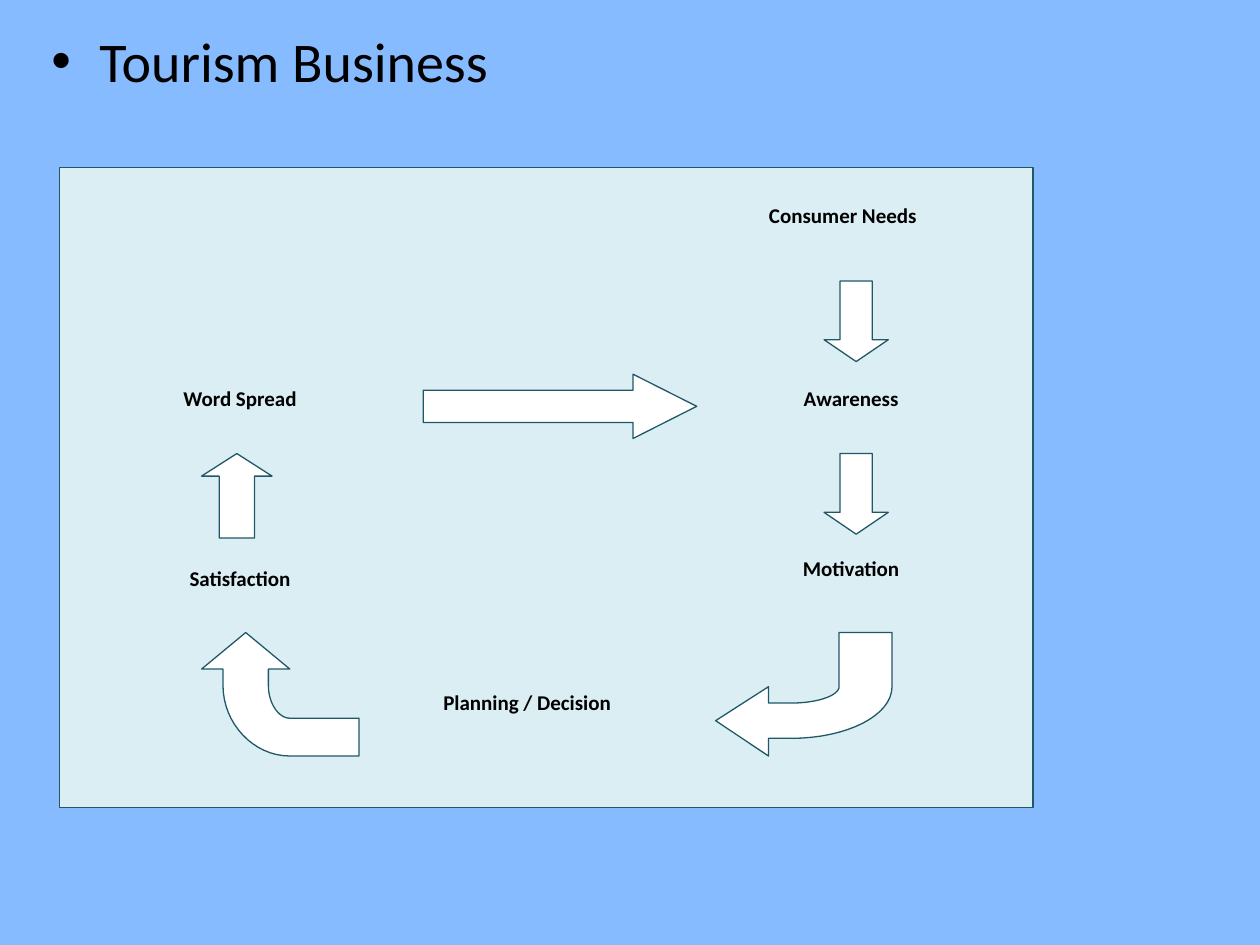
import pptx
import pptx.util
import pptx.dml.color
import pptx.enum.shapes
import pptx.enum.text
import pptx.oxml.ns
import lxml.etree

Inches = pptx.util.Inches
Pt = pptx.util.Pt
RGBColor = pptx.dml.color.RGBColor
MSO_SHAPE = pptx.enum.shapes.MSO_SHAPE
PP_ALIGN = pptx.enum.text.PP_ALIGN

SKY = RGBColor(0x87, 0xBB, 0xFF)
PALE_TEAL = RGBColor(0xDA, 0xEE, 0xF3)
DARK_TEAL = RGBColor(0x20, 0x58, 0x67)
WHITE = RGBColor(0xFF, 0xFF, 0xFF)
BLACK = RGBColor(0, 0, 0)


def style(shape, fill, outlined=True):
    shape.shadow.inherit = False
    shape.fill.solid()
    shape.fill.fore_color.rgb = fill
    if outlined:
        shape.line.color.rgb = DARK_TEAL
        shape.line.width = Pt(0.75)
    else:
        shape.line.fill.background()


def curve(start, control_1, control_2, end, steps=16):
    """Return points along a cubic Bezier curve, leaving out its start."""
    points = []
    for step in range(1, steps + 1):
        t = step / steps
        weights = ((1 - t) ** 3, 3 * t * (1 - t) ** 2, 3 * t ** 2 * (1 - t), t ** 3)
        anchors = (start, control_1, control_2, end)
        points.append(tuple(sum(w * a[axis] for w, a in zip(weights, anchors))
                            for axis in (0, 1)))
    return points


deck = pptx.Presentation()
deck.slide_width = Inches(10)
deck.slide_height = Inches(7.5)
slide = deck.slides.add_slide(deck.slide_layouts[6])
slide.background.fill.solid()
slide.background.fill.fore_color.rgb = SKY

# Heading with a bullet
heading = slide.shapes.add_textbox(Inches(0.31), Inches(0.16), Inches(9.5), Inches(1.03))
heading.text_frame.word_wrap = True
topic = heading.text_frame.paragraphs[0]
topic.text = "Tourism Business"
topic.font.size = Pt(32)
topic.font.name = "Calibri"
topic.font.color.rgb = BLACK
topic_properties = topic._p.get_or_add_pPr()
topic_properties.set("marL", str(Inches(0.38)))
topic_properties.set("indent", str(-Inches(0.38)))
bullet_font = lxml.etree.Element(pptx.oxml.ns.qn("a:buFont"), typeface="Arial")
bullet = lxml.etree.Element(pptx.oxml.ns.qn("a:buChar"), char="•")
topic_properties.insert(0, bullet_font)
topic_properties.insert(1, bullet)

# Diagram panel
diagram = slide.shapes.add_group_shape().shapes
panel = diagram.add_shape(MSO_SHAPE.RECTANGLE, Inches(0.47), Inches(1.33),
                          Inches(7.73), Inches(5.08))
style(panel, PALE_TEAL)

# Stages of the cycle
stages = [
    ("Consumer Needs", 5.82, 1.56, 1.74, PP_ALIGN.CENTER),
    ("Awareness", 5.95, 3.01, 1.61, PP_ALIGN.CENTER),
    ("Motivation", 5.95, 4.36, 1.61, PP_ALIGN.CENTER),
    ("Planning / Decision", 3.42, 5.42, 2.04, PP_ALIGN.LEFT),
    ("Satisfaction", 1.1, 4.44, 1.61, PP_ALIGN.CENTER),
    ("Word Spread", 1.1, 3.01, 1.61, PP_ALIGN.CENTER),
]
for name, left, top, width, alignment in stages:
    stage = diagram.add_shape(MSO_SHAPE.RECTANGLE, Inches(left), Inches(top),
                              Inches(width), Inches(0.47))
    style(stage, PALE_TEAL, outlined=False)
    stage.text_frame.word_wrap = True
    stage.text_frame.vertical_anchor = pptx.enum.text.MSO_ANCHOR.TOP
    label = stage.text_frame.paragraphs[0]
    label.text = name
    label.alignment = alignment
    label.space_after = Pt(10)
    label.font.size = Pt(12)
    label.font.name = "Calibri"
    label.font.bold = True
    label.font.color.rgb = BLACK

# Straight arrows between stages
straight_arrows = [
    (MSO_SHAPE.RIGHT_ARROW, 3.36, 2.97, 2.17, 0.51, 0.99),
    (MSO_SHAPE.DOWN_ARROW, 6.54, 2.23, 0.51, 0.64, 0.34),
    (MSO_SHAPE.DOWN_ARROW, 6.54, 3.6, 0.51, 0.64, 0.34),
    (MSO_SHAPE.UP_ARROW, 1.6, 3.6, 0.56, 0.67, 0.32),
]
for direction, left, top, width, height, head_length in straight_arrows:
    arrow = diagram.add_shape(direction, Inches(left), Inches(top),
                              Inches(width), Inches(height))
    arrow.adjustments[0] = 0.5
    arrow.adjustments[1] = head_length
    style(arrow, WHITE)

# Bent arrows into and out of the planning stage
planning_to_satisfaction = [
    (1.95, 5.02), (1.6, 5.31), (1.77, 5.31), (1.77, 5.44),
    *curve((1.77, 5.44), (1.77, 5.74), (2.01, 6), (2.3, 6)),
    (2.85, 6), (2.85, 5.7), (2.3, 5.7),
    *curve((2.3, 5.7), (2.21, 5.7), (2.13, 5.58), (2.13, 5.44)),
    (2.13, 5.31), (2.3, 5.31),
]
motivation_to_planning = [
    (5.68, 5.72), (6.1, 6), (6.1, 5.86), (6.28, 5.86),
    *curve((6.28, 5.86), (6.72, 5.86), (7.08, 5.68), (7.08, 5.45)),
    (7.08, 5.02), (6.66, 5.02), (6.66, 5.45),
    *curve((6.66, 5.45), (6.66, 5.52), (6.49, 5.58), (6.28, 5.58)),
    (6.1, 5.58), (6.1, 5.45),
]
for outline in (planning_to_satisfaction, motivation_to_planning):
    corners = [(Inches(x), Inches(y)) for x, y in outline]
    builder = diagram.build_freeform(*corners[0])
    builder.add_line_segments(corners[1:], close=True)
    style(builder.convert_to_shape(), WHITE)

deck.save("out.pptx")
